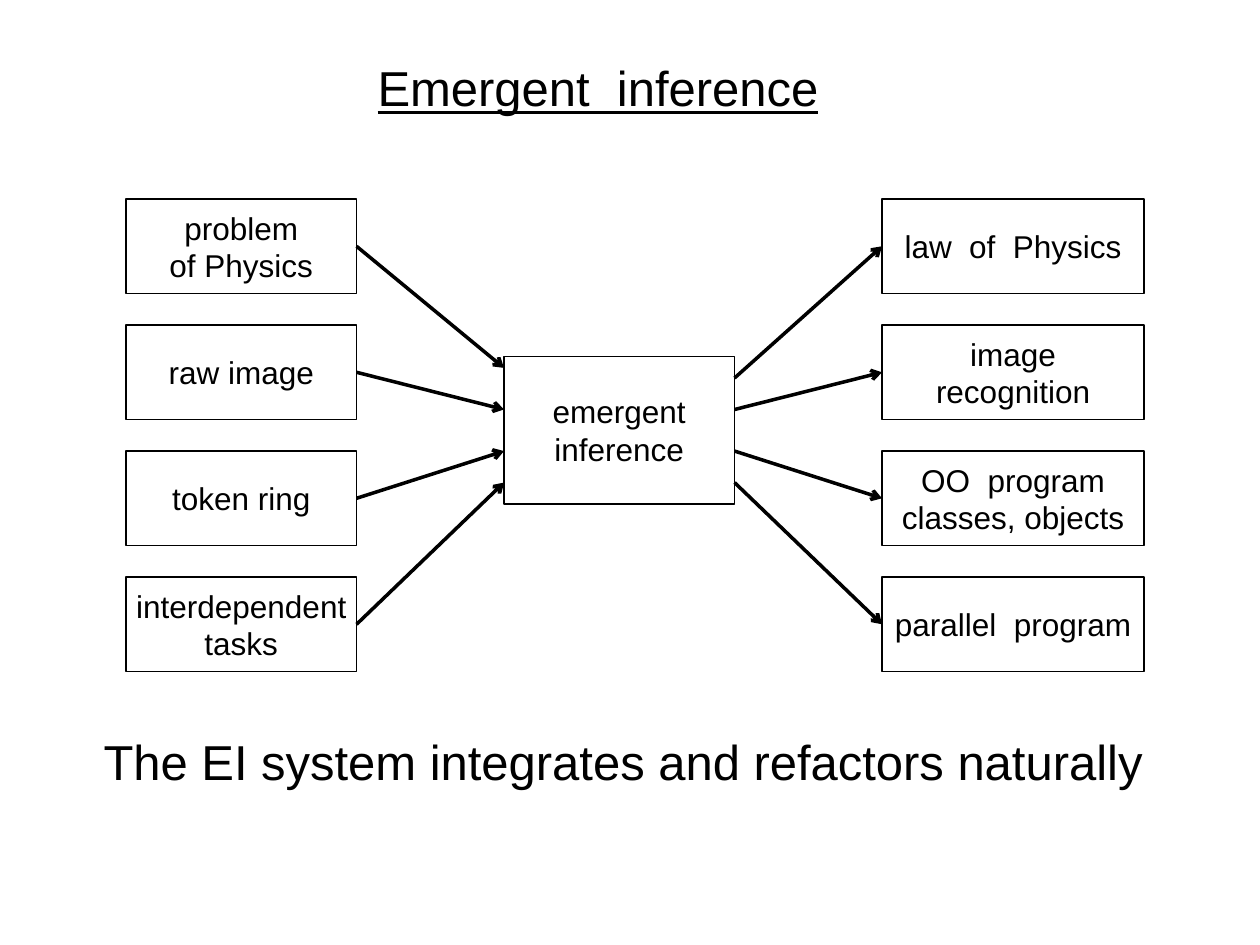
import pptx
import pptx.util
import pptx.dml.color
import pptx.enum.shapes
import pptx.enum.text
import pptx.oxml
import pptx.oxml.ns

Inches, Pt = pptx.util.Inches, pptx.util.Pt
CENTER = pptx.enum.text.PP_ALIGN.CENTER
COLORS = {"ink": "000000"}
INK = pptx.dml.color.RGBColor.from_string(COLORS["ink"])

FIRST_ROW, ROW_STEP, BOX_HEIGHT = 1.58, 1, 0.75
INPUT_LEFT, CORE_LEFT, OUTPUT_LEFT = 1, 4, 7
BOX_WIDTH, OUTPUT_WIDTH = 1.83, 2.08
CORE_TOP, CORE_HEIGHT = 2.83, 1.17

inputs = ["problem\nof Physics", "raw image", "token ring", "interdependent tasks"]
outputs = ["law  of  Physics", "image\nrecognition", "OO  program\nclasses, objects", "parallel  program"]
entry_heights = [2.92, 3.25, 3.58, 3.83]
exit_heights = [3, 3.25, 3.58, 3.83]

presentation = pptx.Presentation()
presentation.slide_width, presentation.slide_height = Inches(10), Inches(7.5)
slide = presentation.slides.add_slide(presentation.slide_layouts[5])


def write(shape, text, size, anchor):
    frame = shape.text_frame
    frame.text = text
    frame.word_wrap = True
    frame.vertical_anchor = anchor
    for paragraph in frame.paragraphs:
        paragraph.alignment = CENTER
        paragraph.font.name = "Arial"
        paragraph.font.size = Pt(size)
        paragraph.font.color.rgb = INK


def add_box(text, left, top, width, height):
    box = slide.shapes.add_shape(
        pptx.enum.shapes.MSO_SHAPE.RECTANGLE, Inches(left), Inches(top), Inches(width), Inches(height))
    box.shadow.inherit = False
    box.fill.background()
    box.line.color.rgb = INK
    box.line.width = Pt(1)
    write(box, text, 18, pptx.enum.text.MSO_ANCHOR.MIDDLE)
    box.text_frame.margin_left = box.text_frame.margin_right = 0
    return box


title = slide.shapes.title
title.left, title.top, title.width, title.height = Inches(2.58), Inches(0.41), Inches(4.33), Inches(0.57)
write(title, "Emergent  inference", 28, pptx.enum.text.MSO_ANCHOR.TOP)
title.text_frame.paragraphs[0].font.underline = True

add_box("emergent\ninference", CORE_LEFT, CORE_TOP, BOX_WIDTH, CORE_HEIGHT)

for row in range(len(inputs)):
    top = FIRST_ROW + row * ROW_STEP
    middle = top + BOX_HEIGHT / 2
    input_box = add_box(inputs[row], INPUT_LEFT, top, BOX_WIDTH, BOX_HEIGHT)
    output_box = add_box(outputs[row], OUTPUT_LEFT, top, OUTPUT_WIDTH, BOX_HEIGHT)
    ends = [
        (INPUT_LEFT + BOX_WIDTH, middle, CORE_LEFT, entry_heights[row]),
        (CORE_LEFT + BOX_WIDTH, exit_heights[row], OUTPUT_LEFT, middle),
    ]
    arrows = []
    for end in ends:
        arrow = slide.shapes.add_connector(
            pptx.enum.shapes.MSO_CONNECTOR.STRAIGHT, *[Inches(value) for value in end])
        arrow.line.color.rgb = INK
        arrow.line.width = Pt(2)
        head = pptx.oxml.parse_xml(f'<a:tailEnd {pptx.oxml.ns.nsdecls("a")} type="arrow"/>')
        arrow.line._get_or_add_ln().append(head)
        arrow._element.spPr.append(pptx.oxml.parse_xml(f'<a:effectLst {pptx.oxml.ns.nsdecls("a")}/>'))
        arrows.append(arrow)
    arrows[0].begin_connect(input_box, 3)
    arrows[1].end_connect(output_box, 1)

statement = slide.shapes.add_textbox(Inches(0.61), Inches(5.76), Inches(8.67), Inches(0.57))
write(statement, "The EI system integrates and refactors naturally", 28, pptx.enum.text.MSO_ANCHOR.TOP)

presentation.save("out.pptx")
